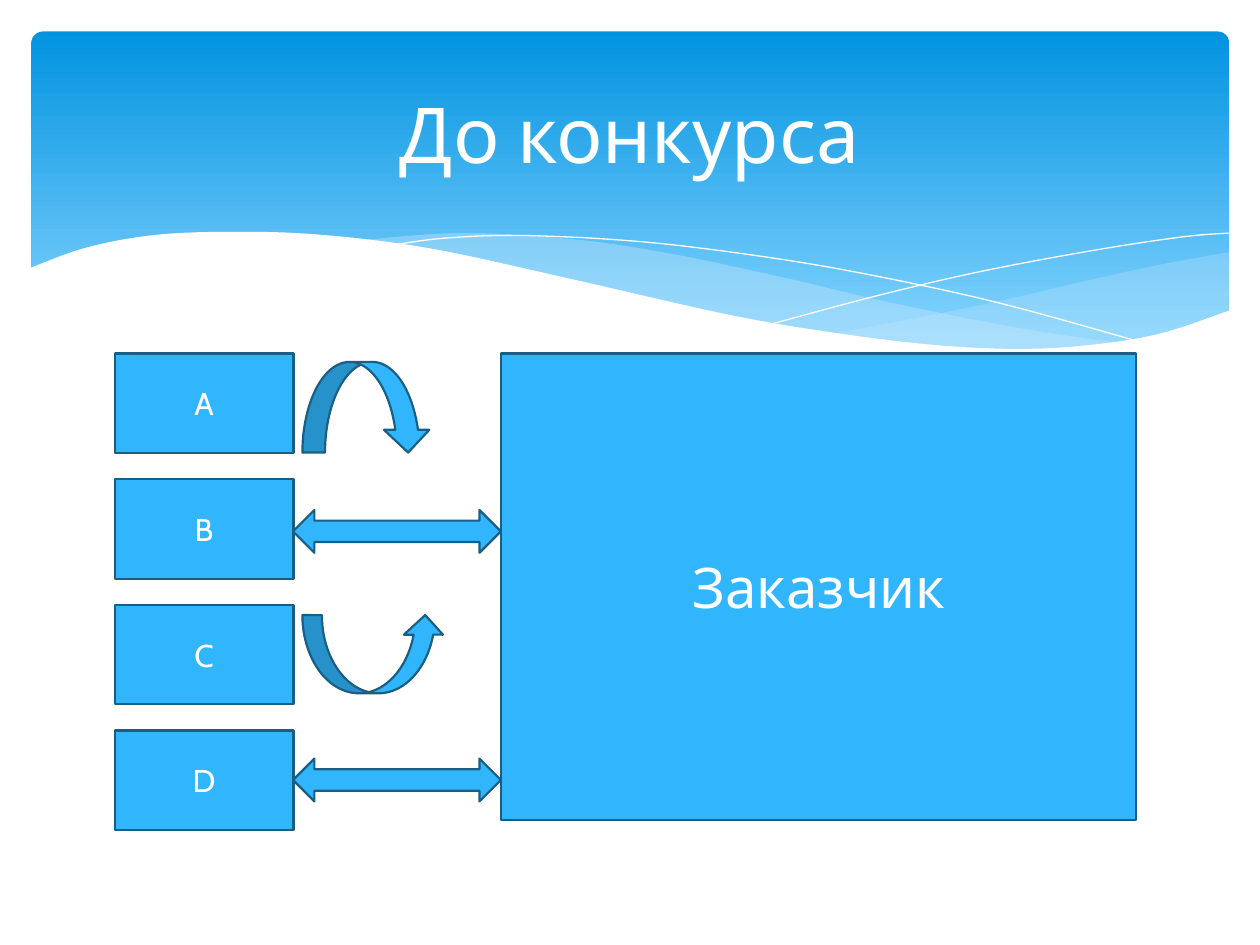
import pptx
import pptx.util
import pptx.dml.color
import pptx.enum.shapes
import pptx.enum.text
import pptx.oxml.ns
import lxml.etree
from dataclasses import dataclass

Pt = pptx.util.Pt
Color = pptx.dml.color.RGBColor.from_string
Kind = pptx.enum.shapes.MSO_SHAPE


@dataclass
class Theme:
    font: str = "Cabin"
    white: str = "FFFFFF"
    banner_top: str = "0293E0"
    banner_bottom: str = "83D3FE"
    wave: str = "C6E7FC"
    block: str = "31B6FD"
    edge: str = "195F84"
    title_size: int = 44
    customer_size: int = 32
    label_size: int = 18
    edge_width: float = 1.25


theme = Theme()


def smooth(points, steps=6):
    padded = [points[0], *points, points[-1]]
    curve = [points[0]]
    for a, b, c, d in zip(padded, padded[1:], padded[2:], padded[3:]):
        for step in range(1, steps + 1):
            t = step / steps
            curve.append(tuple(
                (2 * q + (r - p) * t + (2 * p - 5 * q + 4 * r - s) * t ** 2
                 + (3 * q - p - 3 * r + s) * t ** 3) / 2
                for p, q, r, s in zip(a, b, c, d)))
    return curve


def write(shape, words, size):
    frame = shape.text_frame
    settings = {"word_wrap": True, "vertical_anchor": pptx.enum.text.MSO_ANCHOR.MIDDLE}
    for name, value in settings.items():
        setattr(frame, name, value)
    para = frame.paragraphs[0]
    para.alignment = pptx.enum.text.PP_ALIGN.CENTER
    span = para.add_run()
    span.text = words
    for name, value in {"name": theme.font, "size": Pt(size)}.items():
        setattr(span.font, name, value)
    span.font.color.rgb = Color(theme.white)


deck = pptx.Presentation()
deck.slide_width, deck.slide_height = Pt(720), Pt(540)
page = deck.slides.add_slide(deck.slide_layouts[5])

banner = page.shapes.add_shape(Kind.ROUNDED_RECTANGLE, Pt(18), Pt(18), Pt(684.5), Pt(194.5))
banner.shadow.inherit = False
banner.adjustments[0] = 0.034
banner.fill.gradient()
banner.fill.gradient_angle = 270
stops = [(0, theme.banner_top), (0.9, theme.banner_bottom)]
for stop, (position, color) in zip(banner.fill.gradient_stops, stops):
    stop.position = position
    stop.color.rgb = Color(color)
banner.line.fill.background()

right_wave = (
    smooth([(702.7, 144), (663, 151.2), (620, 160.6), (561, 174.2), (476, 190.8)])
    + smooth([(476, 190.8), (527, 197.3), (578, 200.2), (621.4, 198), (663, 190.8), (702.7, 177.8)]))
middle_wave = (
    smooth([(643, 196.6), (581, 187.2), (508.3, 172.8), (453, 159.8), (389.5, 146.2),
            (334.8, 137.5), (273.6, 133.2), (236.2, 134.6), (206, 137.5)])
    + smooth([(206, 137.5), (260.6, 146.2), (323.3, 159.8), (407.5, 178.6), (468, 190.1),
              (519.8, 197.3), (573, 200.2), (643, 196.6)]))
falling_line = smooth([(222.5, 140.4), (254.2, 136.1), (299.5, 134.6), (367.2, 138.2),
                       (437.8, 146.9), (500.4, 157.7), (572.4, 173.5), (653, 195.8)])
rising_line = smooth([(441.4, 185), (500.4, 169.2), (558.7, 155.5), (623.5, 143.3),
                      (675.4, 135.4), (702, 133.2)])
white_wave = smooth([(703.4, 177.1), (662.4, 190.8), (621.4, 197.3), (582.5, 199.4), (535.7, 197.3),
                     (481, 190.8), (417, 180), (321.8, 158.4), (244.8, 141.8), (180, 133.9),
                     (127.4, 132.5), (85.7, 134.6), (48.2, 141.8), (16.6, 153.4)])
white_wave += [(16.6, 237), (703.4, 237)]

outlines = [
    (right_wave, theme.wave, 29),
    (middle_wave, theme.wave, 40),
    (falling_line, None, None),
    (rising_line, None, None),
    (white_wave, theme.white, 100),
]
for points, color, opacity in outlines:
    corners = [(Pt(x), Pt(y)) for x, y in points]
    builder = page.shapes.build_freeform(*corners[0])
    builder.add_line_segments(corners[1:], close=color is not None)
    outline = builder.convert_to_shape()
    outline.shadow.inherit = False
    if color is None:
        outline.fill.background()
        outline.line.color.rgb = Color(theme.white)
        outline.line.width = Pt(0)
        continue
    outline.fill.solid()
    outline.fill.fore_color.rgb = Color(color)
    outline.line.fill.background()
    if opacity < 100:
        tint = outline.element.spPr.find(".//" + pptx.oxml.ns.qn("a:srgbClr"))
        lxml.etree.SubElement(tint, pptx.oxml.ns.qn("a:alpha"), val=str(opacity * 1000))

title = page.shapes.title
place = {"left": Pt(36), "top": Pt(26.6), "width": Pt(648), "height": Pt(98.6)}
for name, value in place.items():
    setattr(title, name, value)
write(title, "До конкурса", theme.title_size)
banner.element.getparent().append(title.element)

row_top, row_pitch = 202, 71.8
blocks = [
    (Kind.RECTANGLE, 65.5, row_top + row * row_pitch, 102.2, 56.9, letter, theme.label_size, False)
    for row, letter in enumerate("ABCD")
]
blocks += [
    (Kind.RECTANGLE, 286.5, row_top, 362.9, 266.4, "Заказчик", theme.customer_size, False),
    (Kind.LEFT_RIGHT_ARROW, 167.4, 291.4, 118.8, 24.5, None, None, False),
    (Kind.LEFT_RIGHT_ARROW, 167.4, 433.5, 118.8, 24.5, None, None, False),
    (Kind.CURVED_DOWN_ARROW, 172.8, 206.8, 73.4, 51.8, None, None, False),
    (Kind.CURVED_DOWN_ARROW, 172.8, 351.5, 81.4, 44.7, None, None, True),
]
for kind, left, top, width, height, words, size, flipped in blocks:
    box = page.shapes.add_shape(kind, Pt(left), Pt(top), Pt(width), Pt(height))
    box.shadow.inherit = False
    box.fill.solid()
    box.fill.fore_color.rgb = Color(theme.block)
    box.line.color.rgb = Color(theme.edge)
    box.line.width = Pt(theme.edge_width)
    if flipped:
        box.element.spPr.xfrm.set("flipV", "1")
    if words:
        write(box, words, size)

deck.save("out.pptx")
